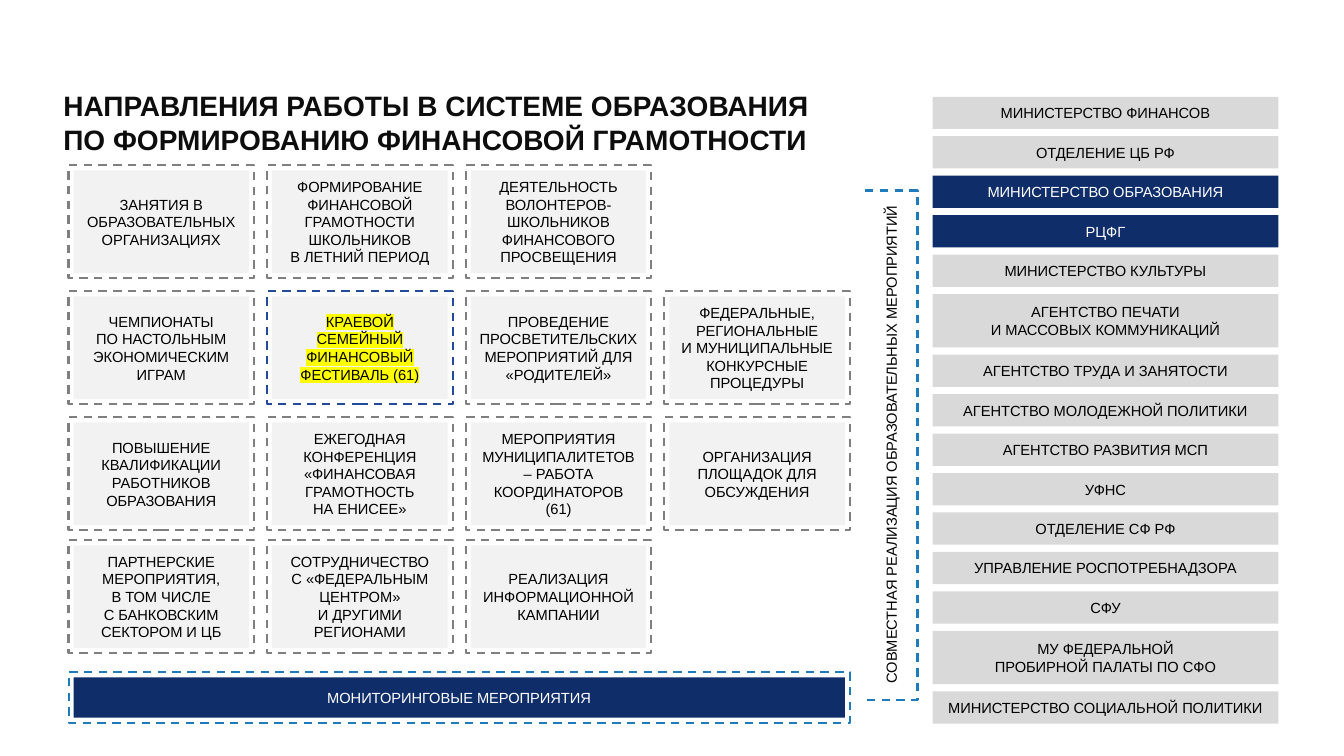
"""Build the slide on financial literacy work in the education system."""
import dataclasses
import typing

import lxml.etree
import pptx
import pptx.dml.color
import pptx.enum.dml
import pptx.enum.shapes
import pptx.enum.text
import pptx.oxml.ns
import pptx.shapes.autoshape
import pptx.slide
import pptx.text.text
import pptx.util

Inches = pptx.util.Inches
Shapes = pptx.enum.shapes.MSO_SHAPE
Align = pptx.enum.text.PP_ALIGN
Anchor = pptx.enum.text.MSO_ANCHOR

BLACK, WHITE, TITLE_INK = "000000", "FFFFFF", "0D0D0D"
NAVY, BLUE, FESTIVAL_BLUE = "0E2D69", "1E7BBC", "234A9B"
CARD_GRAY, PARTNER_GRAY, FRAME_GRAY = "F2F2F2", "D9D9D9", "7F7F7F"
YELLOW = "FFFF00"

COLUMN_LEFT, COLUMN_STEP = 0.68, 1.97
ROW_TOPS = (1.64, 2.89, 4.14, 5.36)
CARD_WIDTH, CARD_HEIGHT, FRAME_GAP = 1.84, 1.12, 0.05
PARTNER_LEFT, PARTNER_WIDTH = 9.25, 3.43
PARTNERS_TOP, PARTNERS_BOTTOM = 0.96, 7.18
ONE_LINE, TWO_LINES = 0.32, 0.53


class Box(typing.NamedTuple):
    left: float
    top: float
    width: float
    height: float

    def shrunk(self, gap: float) -> "Box":
        return Box(self.left + gap, self.top + gap, self.width - 2 * gap, self.height - 2 * gap)

    def lengths(self) -> list[int]:
        return [Inches(value) for value in self]


@dataclasses.dataclass(frozen=True)
class Direction:
    row: int
    column: int
    text: str
    inset: float = 0.1
    frame: str = FRAME_GRAY
    highlight: str | None = None


@dataclasses.dataclass(frozen=True)
class Partner:
    text: str
    fill: str = PARTNER_GRAY
    ink: str = BLACK

    @property
    def height(self) -> float:
        return TWO_LINES if "\v" in self.text else ONE_LINE


DIRECTIONS = (
    Direction(0, 0, "ЗАНЯТИЯ В ОБРАЗОВАТЕЛЬНЫХ ОРГАНИЗАЦИЯХ"),
    Direction(0, 1, "ФОРМИРОВАНИЕ ФИНАНСОВОЙ ГРАМОТНОСТИ ШКОЛЬНИКОВ\nВ ЛЕТНИЙ ПЕРИОД"),
    Direction(0, 2, "ДЕЯТЕЛЬНОСТЬ ВОЛОНТЕРОВ-ШКОЛЬНИКОВ ФИНАНСОВОГО ПРОСВЕЩЕНИЯ"),
    Direction(1, 0, "ЧЕМПИОНАТЫ\nПО НАСТОЛЬНЫМ ЭКОНОМИЧЕСКИМ ИГРАМ"),
    Direction(1, 1, "КРАЕВОЙ СЕМЕЙНЫЙ ФИНАНСОВЫЙ ФЕСТИВАЛЬ (61)", 0.12, FESTIVAL_BLUE, YELLOW),
    Direction(1, 2, "ПРОВЕДЕНИЕ ПРОСВЕТИТЕЛЬСКИХ МЕРОПРИЯТИЙ ДЛЯ «РОДИТЕЛЕЙ»", 0.07),
    Direction(1, 3, "ФЕДЕРАЛЬНЫЕ, РЕГИОНАЛЬНЫЕ\nИ МУНИЦИПАЛЬНЫЕ КОНКУРСНЫЕ ПРОЦЕДУРЫ"),
    Direction(2, 0, "ПОВЫШЕНИЕ КВАЛИФИКАЦИИ РАБОТНИКОВ ОБРАЗОВАНИЯ"),
    Direction(2, 1, "ЕЖЕГОДНАЯ КОНФЕРЕНЦИЯ «ФИНАНСОВАЯ ГРАМОТНОСТЬ\vНА ЕНИСЕЕ»"),
    Direction(2, 2, "МЕРОПРИЯТИЯ МУНИЦИПАЛИТЕТОВ – РАБОТА КООРДИНАТОРОВ (61)"),
    Direction(2, 3, "ОРГАНИЗАЦИЯ ПЛОЩАДОК ДЛЯ ОБСУЖДЕНИЯ"),
    Direction(3, 0, "ПАРТНЕРСКИЕ МЕРОПРИЯТИЯ,\nВ ТОМ ЧИСЛЕ\nС БАНКОВСКИМ СЕКТОРОМ И ЦБ"),
    Direction(3, 1, "СОТРУДНИЧЕСТВО С «ФЕДЕРАЛЬНЫМ ЦЕНТРОМ»\nИ ДРУГИМИ РЕГИОНАМИ", 0.12),
    Direction(3, 2, "РЕАЛИЗАЦИЯ ИНФОРМАЦИОННОЙ КАМПАНИИ"),
)

PARTNERS = (
    Partner("МИНИСТЕРСТВО ФИНАНСОВ"),
    Partner("ОТДЕЛЕНИЕ ЦБ РФ"),
    Partner("МИНИСТЕРСТВО ОБРАЗОВАНИЯ", NAVY, WHITE),
    Partner("РЦФГ", NAVY, WHITE),
    Partner("МИНИСТЕРСТВО КУЛЬТУРЫ"),
    Partner("АГЕНТСТВО ПЕЧАТИ\vИ МАССОВЫХ КОММУНИКАЦИЙ"),
    Partner("АГЕНТСТВО ТРУДА И ЗАНЯТОСТИ"),
    Partner("АГЕНТСТВО МОЛОДЕЖНОЙ ПОЛИТИКИ"),
    Partner("АГЕНТСТВО РАЗВИТИЯ МСП"),
    Partner("УФНС"),
    Partner("ОТДЕЛЕНИЕ СФ РФ"),
    Partner("УПРАВЛЕНИЕ РОСПОТРЕБНАДЗОРА"),
    Partner("СФУ"),
    Partner("МУ ФЕДЕРАЛЬНОЙ\vПРОБИРНОЙ ПАЛАТЫ ПО СФО"),
    Partner("МИНИСТЕРСТВО СОЦИАЛЬНОЙ ПОЛИТИКИ"),
)


def color(value: str) -> pptx.dml.color.RGBColor:
    return pptx.dml.color.RGBColor.from_string(value)


def assign(target: object, values: dict[str, object]) -> None:
    for attribute, value in values.items():
        setattr(target, attribute, value)


def write(frame: pptx.text.text.TextFrame, text: str, ink: str = BLACK, size: float = 10.5,
          bold: bool = False, align: Align = Align.CENTER, anchor: Anchor = Anchor.MIDDLE,
          inset: float = 0.1, highlight: str | None = None) -> None:
    assign(frame, {"word_wrap": True, "vertical_anchor": anchor,
                   "margin_left": Inches(inset), "margin_right": Inches(inset),
                   "margin_top": Inches(0.05), "margin_bottom": Inches(0.05)})
    frame.text = text
    for paragraph in frame.paragraphs:
        paragraph.alignment = align
        for run in paragraph.runs:
            run.font.color.rgb = color(ink)
            if highlight:
                qn = pptx.oxml.ns.qn
                marker = lxml.etree.SubElement(run.font._element, qn("a:highlight"))
                lxml.etree.SubElement(marker, qn("a:srgbClr")).set("val", highlight)
            assign(run.font, {"name": "Arial", "size": pptx.util.Pt(size), "bold": bold})


def add_panel(slide: pptx.slide.Slide, box: Box, fill: str) -> pptx.shapes.autoshape.Shape:
    panel = slide.shapes.add_shape(Shapes.RECTANGLE, *box.lengths())
    panel.shadow.inherit = False
    panel.fill.solid()
    panel.fill.fore_color.rgb = color(fill)
    panel.line.fill.background()
    return panel


def add_dashed(slide: pptx.slide.Slide, box: Box, stroke: str,
               outline: Shapes = Shapes.RECTANGLE) -> pptx.shapes.autoshape.Shape:
    dashed = slide.shapes.add_shape(outline, *box.lengths())
    dashed.shadow.inherit = False
    dashed.fill.background()
    dashed.line.color.rgb = color(stroke)
    assign(dashed.line, {"width": pptx.util.Pt(1.5),
                         "dash_style": pptx.enum.dml.MSO_LINE.DASH})
    return dashed


def add_direction(slide: pptx.slide.Slide, direction: Direction) -> None:
    box = Box(COLUMN_LEFT + direction.column * COLUMN_STEP, ROW_TOPS[direction.row],
              CARD_WIDTH, CARD_HEIGHT)
    card = add_panel(slide, box.shrunk(FRAME_GAP), CARD_GRAY)
    write(card.text_frame, direction.text, inset=direction.inset, highlight=direction.highlight)
    add_dashed(slide, box, direction.frame)


def add_partners(slide: pptx.slide.Slide) -> None:
    filled = sum(partner.height for partner in PARTNERS)
    gap = (PARTNERS_BOTTOM - PARTNERS_TOP - filled) / (len(PARTNERS) - 1)
    top = PARTNERS_TOP
    for partner in PARTNERS:
        bar = add_panel(slide, Box(PARTNER_LEFT, top, PARTNER_WIDTH, partner.height), partner.fill)
        write(bar.text_frame, partner.text, partner.ink)
        top += partner.height + gap


def main() -> None:
    deck = pptx.Presentation()
    assign(deck, {"slide_width": Inches(13.33), "slide_height": Inches(7.5)})
    slide = deck.slides.add_slide(deck.slide_layouts[6])

    title = slide.shapes.add_textbox(*Box(0.53, 0.83, 9.4, 0.77).lengths())
    write(title.text_frame,
          "НАПРАВЛЕНИЯ РАБОТЫ В СИСТЕМЕ ОБРАЗОВАНИЯ\nПО ФОРМИРОВАНИЮ ФИНАНСОВОЙ ГРАМОТНОСТИ",
          TITLE_INK, 20, True, Align.LEFT, Anchor.TOP)

    bracket = add_dashed(slide, Box(8.58, 1.89, 0.52, 5.05), BLUE, Shapes.RIGHT_BRACKET)
    bracket.adjustments[0] = 0
    joint_events = slide.shapes.add_textbox(*Box(6.32, 4.27, 5.04, 0.28).lengths())
    joint_events.rotation = 270
    write(joint_events.text_frame, "СОВМЕСТНАЯ РЕАЛИЗАЦИЯ ОБРАЗОВАТЕЛЬНЫХ МЕРОПРИЯТИЙ",
          anchor=Anchor.TOP)

    for direction in DIRECTIONS:
        add_direction(slide, direction)

    monitoring_box = Box(COLUMN_LEFT, 6.67, 7.75, 0.5)
    monitoring = add_panel(slide, monitoring_box.shrunk(FRAME_GAP), NAVY)
    write(monitoring.text_frame, "МОНИТОРИНГОВЫЕ МЕРОПРИЯТИЯ", WHITE)
    add_dashed(slide, monitoring_box, BLUE)

    add_partners(slide)
    deck.save("out.pptx")


if __name__ == "__main__":
    main()
